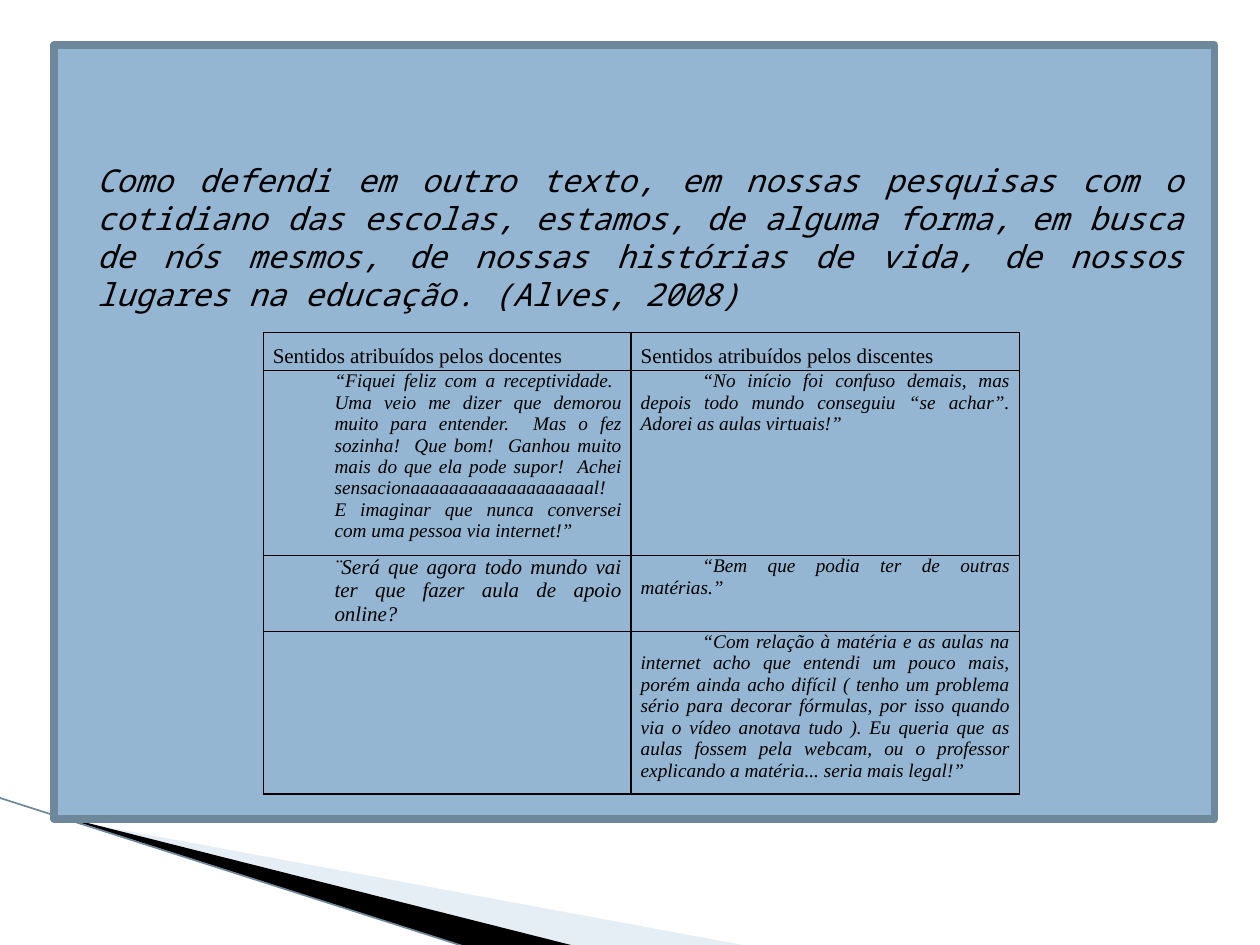
from lxml import etree
from pptx import Presentation
from pptx.dml.color import RGBColor
from pptx.enum.shapes import MSO_CONNECTOR, MSO_SHAPE
from pptx.enum.text import MSO_AUTO_SIZE, PP_ALIGN
from pptx.oxml.ns import qn
from pptx.util import Inches, Pt

STRAIGHT = MSO_CONNECTOR.STRAIGHT
RECTANGLE = MSO_SHAPE.RECTANGLE
GROW = MSO_AUTO_SIZE.SHAPE_TO_FIT_TEXT
JUSTIFY = PP_ALIGN.JUSTIFY

BLACK = RGBColor(0x00, 0x00, 0x00)
PALE_BLUE = RGBColor(0xC0, 0xD3, 0xE6)
PANEL_BLUE = RGBColor(0x94, 0xB6, 0xD2)
SLATE = RGBColor(0x6D, 0x87, 0x9B)

QUOTE = (
    "Como defendi em outro texto, em nossas pesquisas com o cotidiano das escolas, "
    "estamos, de alguma forma, em busca de nós mesmos, de nossas histórias de vida, "
    "de nossos lugares na educação. (Alves, 2008)"
)
QUOTE_FONT = {"name": "Noto Sans Mono", "size": Pt(18), "italic": True}

HEADER = {"size": 12, "italic": False, "spacing": 1.5}
TEACHER = {"size": 11, "italic": True, "margin": 0.49}
TEACHER_LARGE = {**TEACHER, "size": 12}
STUDENT = {"size": 11, "italic": True, "indent": 0.49}

ROWS = [
    [("Sentidos atribuídos pelos docentes", HEADER),
     ("Sentidos atribuídos pelos discentes", HEADER)],
    [("“Fiquei feliz com a receptividade.  Uma veio me dizer que demorou muito para "
      "entender.  Mas o fez sozinha!  Que bom!  Ganhou muito mais do que ela pode "
      "supor!  Achei sensacionaaaaaaaaaaaaaaaaaaal!  E imaginar que nunca conversei "
      "com uma pessoa via internet!”", TEACHER),
     ("“No início foi confuso demais, mas depois todo mundo conseguiu “se achar”. "
      "Adorei as aulas virtuais!”", STUDENT)],
    [("¨Será que agora todo mundo vai ter que fazer aula de apoio online?",
      TEACHER_LARGE),
     ("“Bem que podia ter de outras matérias.”", STUDENT)],
    [None,
     ("“Com relação à matéria e as aulas na internet acho que entendi um pouco mais, "
      "porém ainda acho difícil ( tenho um problema sério para decorar fórmulas, por "
      "isso quando via o vídeo anotava tudo ). Eu queria que as aulas fossem pela "
      "webcam, ou o professor explicando a matéria... seria mais legal!”", STUDENT)],
]
COLUMN_WIDTHS = [2.92, 3.08]
ROW_HEIGHTS = [0.3, 1.47, 0.6, 1.29]

WEDGES = [
    ([(0.55, 6.51), (5.95, 7.51), (4.56, 7.51), (0.55, 6.5)], PALE_BLUE, 40),
    ([(0.53, 6.49), (4.57, 7.51), (3.72, 7.52), (0.54, 6.5)], BLACK, 100),
]


def set_values(target, values):
    for name, value in values.items():
        setattr(target, name, value)


def add_wedge(page, points, color, opacity):
    corners = [(Inches(x), Inches(y)) for x, y in points]
    builder = page.shapes.build_freeform(*corners[0])
    builder.add_line_segments(corners[1:], close=True)
    wedge = builder.convert_to_shape()
    wedge.shadow.inherit = False
    wedge.fill.solid()
    wedge.fill.fore_color.rgb = color
    wedge.line.fill.background()
    if opacity < 100:
        fill_color = wedge._element.spPr.find(qn("a:solidFill"))[0]
        etree.SubElement(fill_color, qn("a:alpha"), val=str(opacity * 1000))


def add_edge(page):
    edge = page.shapes.add_connector(
        STRAIGHT, Inches(-0.01), Inches(6.33), Inches(3.71), Inches(7.52))
    edge.line.color.rgb = SLATE
    edge.line.width = Pt(0.95)
    etree.SubElement(edge._element.spPr, qn("a:effectLst"))


def add_panel(page):
    panel = page.shapes.add_shape(
        RECTANGLE, Inches(0.43), Inches(0.36), Inches(9.21), Inches(6.14))
    panel.shadow.inherit = False
    panel.fill.solid()
    panel.fill.fore_color.rgb = PANEL_BLUE
    panel.line.color.rgb = SLATE
    panel.line.width = Pt(4.33)


def add_quote(page):
    box = page.shapes.add_textbox(
        Inches(0.67), Inches(1.23), Inches(8.82), Inches(1.01))
    set_values(box.text_frame, {"word_wrap": True, "auto_size": GROW})
    para = box.text_frame.paragraphs[0]
    para.alignment = JUSTIFY
    span = para.add_run()
    span.text = QUOTE
    set_values(span.font, QUOTE_FONT)
    span.font.color.rgb = BLACK


def add_borders(cell):
    properties = cell._tc.get_or_add_tcPr()
    for position, side in enumerate(("lnL", "lnR", "lnT", "lnB")):
        border = etree.Element(qn(f"a:{side}"), w=str(Pt(1)))
        fill = etree.SubElement(border, qn("a:solidFill"))
        etree.SubElement(fill, qn("a:srgbClr"), val=str(BLACK))
        properties.insert(position, border)


def write_cell(cell, text, style):
    set_values(cell, {
        "margin_left": Pt(5.4), "margin_right": Pt(5.4),
        "margin_top": 0, "margin_bottom": 0,
    })
    para = cell.text_frame.paragraphs[0]
    set_values(para, {"alignment": JUSTIFY, "line_spacing": style.get("spacing")})
    properties = para._p.get_or_add_pPr()
    properties.set("marL", str(Inches(style.get("margin", 0))))
    properties.set("indent", str(Inches(style.get("indent", 0))))
    span = para.add_run()
    span.text = text
    set_values(span.font, {
        "name": "Times New Roman", "size": Pt(style["size"]),
        "italic": style["italic"], "bold": False,
    })
    span.font.color.rgb = BLACK


def add_answers(page):
    table = page.shapes.add_table(
        len(ROWS), len(COLUMN_WIDTHS), Inches(2.09), Inches(2.64),
        Inches(sum(COLUMN_WIDTHS)), Inches(sum(ROW_HEIGHTS))).table
    set_values(table, {"first_row": False, "horz_banding": False})
    for column, width in zip(table.columns, COLUMN_WIDTHS):
        column.width = Inches(width)
    for row, height, entries in zip(table.rows, ROW_HEIGHTS, ROWS):
        row.height = Inches(height)
        for cell, entry in zip(row.cells, entries):
            cell.fill.background()
            add_borders(cell)
            if entry:
                write_cell(cell, *entry)


def main():
    deck = Presentation()
    set_values(deck, {"slide_width": Inches(10), "slide_height": Inches(7.5)})
    page = deck.slides.add_slide(deck.slide_layouts[6])
    for points, color, opacity in WEDGES:
        add_wedge(page, points, color, opacity)
    add_edge(page)
    add_panel(page)
    add_quote(page)
    add_answers(page)
    deck.save("out.pptx")


if __name__ == "__main__":
    main()
